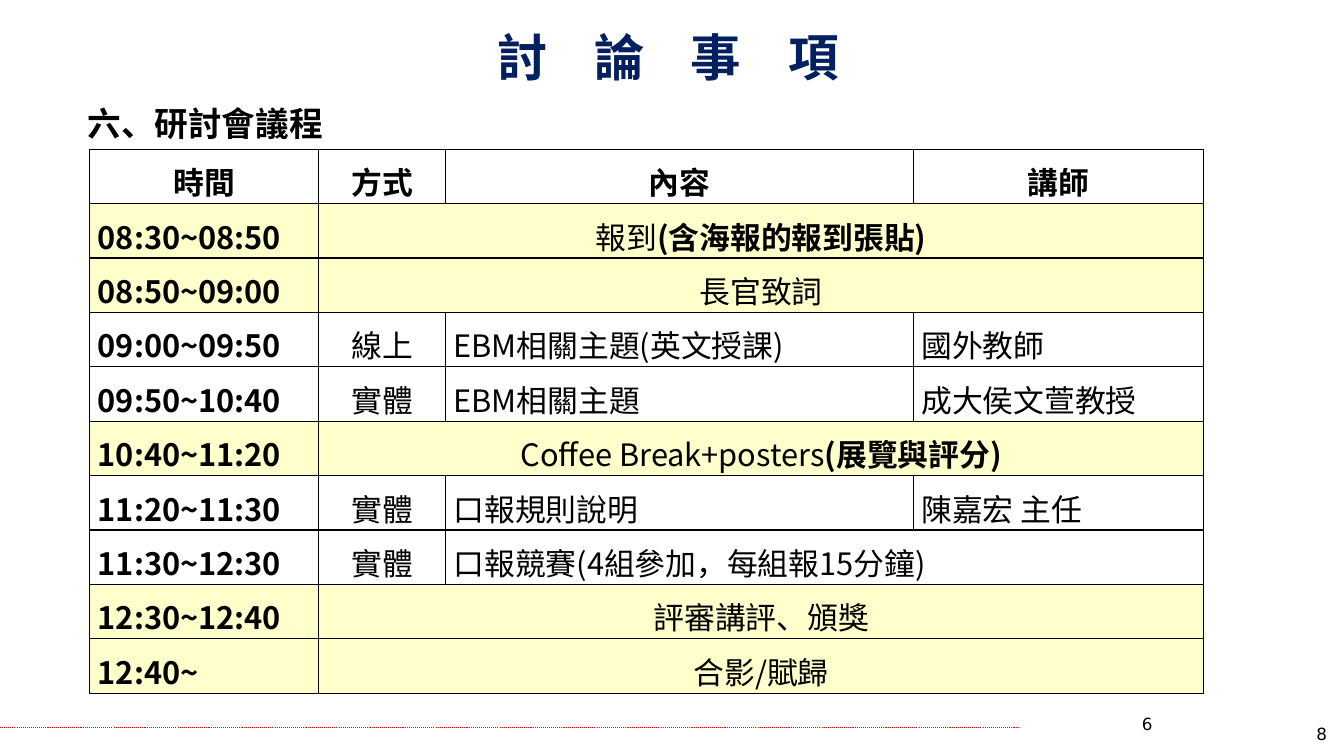
from lxml import etree
from pptx import Presentation
from pptx import util as u
from pptx.dml.color import RGBColor
from pptx.enum import dml, shapes, text
from pptx.oxml import ns

BLACK = RGBColor(0x00, 0x00, 0x00)
WHITE = RGBColor(0xFF, 0xFF, 0xFF)
NAVY = RGBColor(0x00, 0x20, 0x60)
RED = RGBColor(0xFF, 0x00, 0x00)
CREAM = RGBColor(0xFF, 0xFF, 0xCC)
CJK_FONT = "Noto Sans CJK SC"
NUMBER_FONT = "DejaVu Sans"
EMU_PER_PX = 9144
LEFT, CENTER, RIGHT = text.PP_ALIGN.LEFT, text.PP_ALIGN.CENTER, text.PP_ALIGN.RIGHT

HEADERS = ["時間", "方式", "內容", "講師"]
COLUMN_WIDTHS = [227, 126, 464, 288]
ROW_HEIGHT = 54
AGENDA = [
    ["08:30~08:50", ["報到", "(含海報的報到張貼)"]],
    ["08:50~09:00", ["長官致詞"]],
    ["09:00~09:50", "線上", "EBM相關主題(英文授課)", "國外教師"],
    ["09:50~10:40", "實體", "EBM相關主題", "成大侯文萱教授"],
    ["10:40~11:20", ["Coffee Break+posters", "(展覽與評分)"]],
    ["11:20~11:30", "實體", "口報規則說明", "陳嘉宏 主任"],
    ["11:30~12:30", "實體", "口報競賽(4組參加，每組報15分鐘)"],
    ["12:30~12:40", ["評審講評、頒獎"]],
    ["12:40~", ["合影/賦歸"]],
]


def px(length):
    return u.Emu(length * EMU_PER_PX)


class AgendaSlide:
    def __init__(self, presentation):
        self.slide = presentation.slides.add_slide(presentation.slide_layouts[5])

    def style(self, run, size, bold=False, color=BLACK, font=CJK_FONT):
        run.font.size = u.Pt(size)
        run.font.bold = bold
        run.font.color.rgb = color
        run.font.name = font
        east_asian = etree.SubElement(run.font._element, ns.qn("a:ea"))
        east_asian.set("typeface", font)

    def title(self, spaced, last, left, top, width, height, spacing):
        shape = self.slide.shapes.title
        shape.left, shape.top, shape.width, shape.height = map(px, (left, top, width, height))
        frame = shape.text_frame
        frame.vertical_anchor = text.MSO_ANCHOR.BOTTOM
        frame.text = spaced
        paragraph = frame.paragraphs[0]
        paragraph.alignment = CENTER
        paragraph.add_run().text = last
        for run in paragraph.runs:
            self.style(run, 36, True, NAVY)
        paragraph.runs[0].font._element.set("spc", str(spacing))

    def label(self, wording, left, top, width, height, size, align=LEFT, **style):
        box = self.slide.shapes.add_textbox(*map(px, (left, top, width, height)))
        box.text_frame.word_wrap = True
        box.text_frame.text = wording
        paragraph = box.text_frame.paragraphs[0]
        paragraph.alignment = align
        self.style(paragraph.runs[0], size, **style)

    def dotted_line(self, left, right, y):
        line = self.slide.shapes.add_connector(
            shapes.MSO_CONNECTOR.STRAIGHT, px(left), px(y), px(right), px(y))
        line.line.color.rgb = RED
        line.line.width = u.Pt(0.75)
        line.line.dash_style = dml.MSO_LINE.ROUND_DOT
        etree.SubElement(line._element.spPr, ns.qn("a:effectLst"))

    def border(self, cell):
        properties = cell._tc.get_or_add_tcPr()
        for position, side in enumerate(("lnL", "lnR", "lnT", "lnB")):
            edge = etree.Element(ns.qn("a:" + side), w=str(u.Pt(1)))
            fill = etree.SubElement(edge, ns.qn("a:solidFill"))
            etree.SubElement(fill, ns.qn("a:srgbClr"), val=str(BLACK))
            properties.insert(position, edge)

    def fill_cell(self, cell, parts, align, bold_from):
        cell.vertical_anchor = text.MSO_ANCHOR.BOTTOM
        cell.margin_left = cell.margin_right = px(8)
        cell.margin_top = cell.margin_bottom = 0
        paragraph = cell.text_frame.paragraphs[0]
        paragraph.alignment = align
        for position, part in enumerate(parts):
            run = paragraph.add_run()
            run.text = part
            self.style(run, 22, position >= bold_from)

    def agenda(self, left, top):
        rows = [HEADERS] + AGENDA
        table = self.slide.shapes.add_table(
            len(rows), len(HEADERS), px(left), px(top),
            px(sum(COLUMN_WIDTHS)), px(ROW_HEIGHT * len(rows))).table
        table.first_row = table.horz_banding = False
        for column, width in zip(table.columns, COLUMN_WIDTHS):
            column.width = px(width)
        for r, entries in enumerate(rows):
            table.rows[r].height = px(ROW_HEIGHT)
            banner = isinstance(entries[-1], list)
            for c in range(len(HEADERS)):
                cell = table.cell(r, c)
                cell.fill.solid()
                cell.fill.fore_color.rgb = CREAM if banner else WHITE
                self.border(cell)
            for c, entry in enumerate(entries):
                centered = r == 0 or c == 1
                self.fill_cell(table.cell(r, c), entry if isinstance(entry, list) else [entry],
                               CENTER if centered else LEFT, 0 if r == 0 or c == 0 else 1)
            if len(entries) < len(HEADERS):
                table.cell(r, len(entries) - 1).merge(table.cell(r, len(HEADERS) - 1))


def main():
    presentation = Presentation()
    presentation.slide_width, presentation.slide_height = px(1333), px(750)
    slide = AgendaSlide(presentation)
    slide.dotted_line(0, 1011, 722)
    slide.label("6", 936, 703, 217, 52, 12, RIGHT, font=NUMBER_FONT)
    slide.label("六、研討會議程", 77, 97, 798, 51, 24, bold=True)
    slide.title("討 論 事 ", "項", 79, 0, 1167, 91, 1250)
    slide.agenda(89, 148)
    slide.label("8", 1037, 713, 289, 52, 12, RIGHT, font=NUMBER_FONT)
    presentation.save("out.pptx")


if __name__ == "__main__":
    main()
